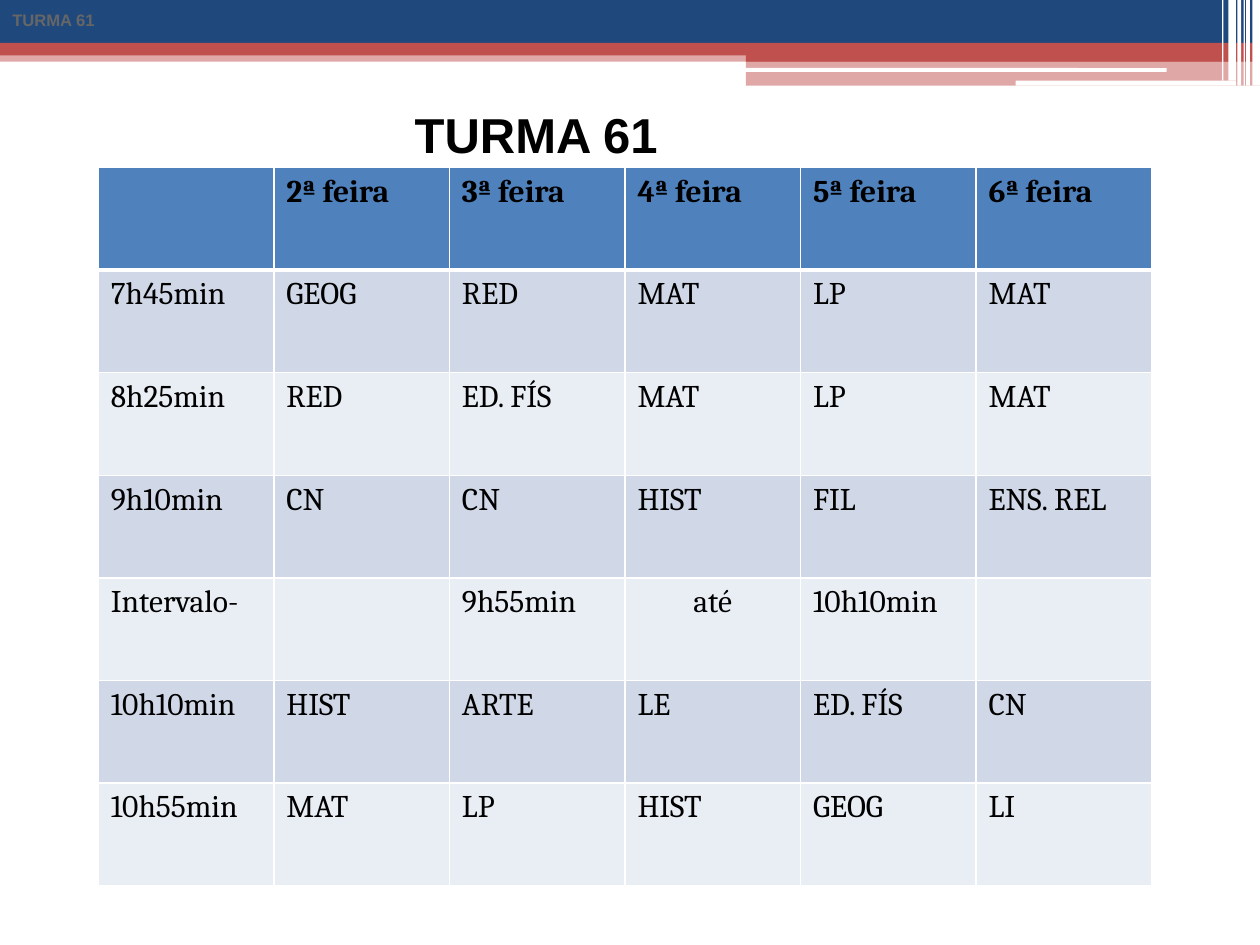
from dataclasses import dataclass

import pptx
import pptx.dml.color
import pptx.enum.shapes
import pptx.enum.text
import pptx.oxml.ns
import pptx.util
from lxml import etree

Inches = pptx.util.Inches
Pt = pptx.util.Pt
RGBColor = pptx.dml.color.RGBColor
MSO_SHAPE = pptx.enum.shapes.MSO_SHAPE
PP_ALIGN = pptx.enum.text.PP_ALIGN
qn = pptx.oxml.ns.qn

WHITE = RGBColor(0xFF, 0xFF, 0xFF)
BLACK = RGBColor(0x00, 0x00, 0x00)
GRAY = RGBColor(0x66, 0x66, 0x66)
NAVY = RGBColor(0x1F, 0x49, 0x7D)
RED = RGBColor(0xC0, 0x50, 0x4D)
HEADER = RGBColor(0x4F, 0x81, 0xBD)
BAND_DARK = RGBColor(0xD0, 0xD8, 0xE8)
BAND_LIGHT = RGBColor(0xE9, 0xED, 0xF4)


@dataclass
class Bar:
    left: float
    top: float
    width: float
    height: float
    color: RGBColor = WHITE
    opacity: int = 100
    rounded: bool = False


@dataclass
class Label:
    text: str
    left: float
    top: float
    width: float
    height: float
    size: float
    color: RGBColor
    align: PP_ALIGN


BARS = [
    Bar(0, 0.4, 10, 0.09, RED, 50),
    Bar(0, 0, 10, 0.34, NAVY),
    Bar(0, 0.34, 10, 0.1, RED),
    Bar(5.92, 0.39, 4.08, 0.1, RED),
    Bar(5.92, 0.48, 4.08, 0.2, RED, 50),
    Bar(5.91, 0.54, 3.35, 0.03, rounded=True),
    Bar(8.06, 0.64, 1.75, 0.04, rounded=True),
    Bar(9.94, 0, 0.06, 0.68),
    Bar(9.89, 0, 0.03, 0.68),
    Bar(9.87, 0, 0.01, 0.68),
    Bar(9.82, 0, 0.03, 0.68),
    Bar(9.75, 0, 0.06, 0.64),
    Bar(9.7, 0, 0.01, 0.64),
]
LABELS = [
    Label("TURMA 61", 0, 0.03, 1.5, 0.26, 9.5, GRAY, PP_ALIGN.LEFT),
    Label("TURMA 61", 1.56, 0.78, 5.39, 0.57, 28, BLACK, PP_ALIGN.CENTER),
]
SCHEDULE = [
    ["", "2ª feira", "3ª feira", "4ª feira", "5ª feira", "6ª feira"],
    ["7h45min", "GEOG", "RED", "MAT", "LP", "MAT"],
    ["8h25min", "RED", "ED. FÍS", "MAT", "LP", "MAT"],
    ["9h10min", "CN", "CN", "HIST", "FIL", "ENS. REL"],
    ["Intervalo-", "", "9h55min", "até", "10h10min", ""],
    ["10h10min", "HIST", "ARTE", "LE", "ED. FÍS", "CN"],
    ["10h55min", "MAT", "LP", "HIST", "GEOG", "LI"],
]


def draw_bar(s, bar: Bar) -> None:
    kind = MSO_SHAPE.ROUNDED_RECTANGLE if bar.rounded else MSO_SHAPE.RECTANGLE
    sp = s.shapes.add_shape(kind, Inches(bar.left), Inches(bar.top),
                            Inches(bar.width), Inches(bar.height))
    sp.shadow.inherit = False
    sp.line.fill.background()
    sp.fill.solid()
    sp.fill.fore_color.rgb = bar.color
    if bar.opacity < 100:
        color = sp.element.spPr.find(qn("a:solidFill")).find(qn("a:srgbClr"))
        etree.SubElement(color, qn("a:alpha"), val=str(bar.opacity * 1000))


def set_font(p, name: str, size: float, color: RGBColor, bold: bool) -> None:
    p.font.name = name
    p.font.size = Pt(size)
    p.font.color.rgb = color
    p.font.bold = bold


def draw_label(s, label: Label) -> None:
    sp = s.shapes.add_textbox(Inches(label.left), Inches(label.top),
                              Inches(label.width), Inches(label.height))
    tf = sp.text_frame
    tf.word_wrap = True
    p = tf.paragraphs[0]
    p.text = label.text
    p.alignment = label.align
    set_font(p, "Arial", label.size, label.color, True)


def set_borders(cell, top: float, bottom: float) -> None:
    tc_pr = cell._tc.get_or_add_tcPr()
    widths = {"a:lnL": 1, "a:lnR": 1, "a:lnT": top, "a:lnB": bottom}
    for i, (tag, width) in enumerate(widths.items()):
        ln = etree.Element(qn(tag), w=str(int(Pt(width))))
        fill = etree.SubElement(ln, qn("a:solidFill"))
        etree.SubElement(fill, qn("a:srgbClr"), val=str(WHITE))
        tc_pr.insert(i, ln)


def draw_schedule(s, rows: list[list[str]]) -> None:
    frame = s.shapes.add_table(len(rows), len(rows[0]), Inches(0.78), Inches(1.33),
                               Inches(8.36), Inches(5.7))
    table = frame.table
    for i, row in enumerate(rows):
        for j, text in enumerate(row):
            cell = table.cell(i, j)
            cell.fill.solid()
            cell.fill.fore_color.rgb = (
                HEADER if i == 0 else BAND_DARK if i % 2 else BAND_LIGHT)
            set_borders(cell, 3 if i == 1 else 1, 3 if i == 0 else 1)
            p = cell.text_frame.paragraphs[0]
            p.text = text
            set_font(p, "Cambria", 18, BLACK, i == 0)
            if text == "até":
                p.alignment = PP_ALIGN.CENTER


def main() -> None:
    prs = pptx.Presentation()
    prs.slide_width = Inches(10)
    prs.slide_height = Inches(7.5)
    s = prs.slides.add_slide(prs.slide_layouts[6])
    for bar in BARS:
        draw_bar(s, bar)
    for label in LABELS:
        draw_label(s, label)
    draw_schedule(s, SCHEDULE)
    prs.save("out.pptx")


if __name__ == "__main__":
    main()
